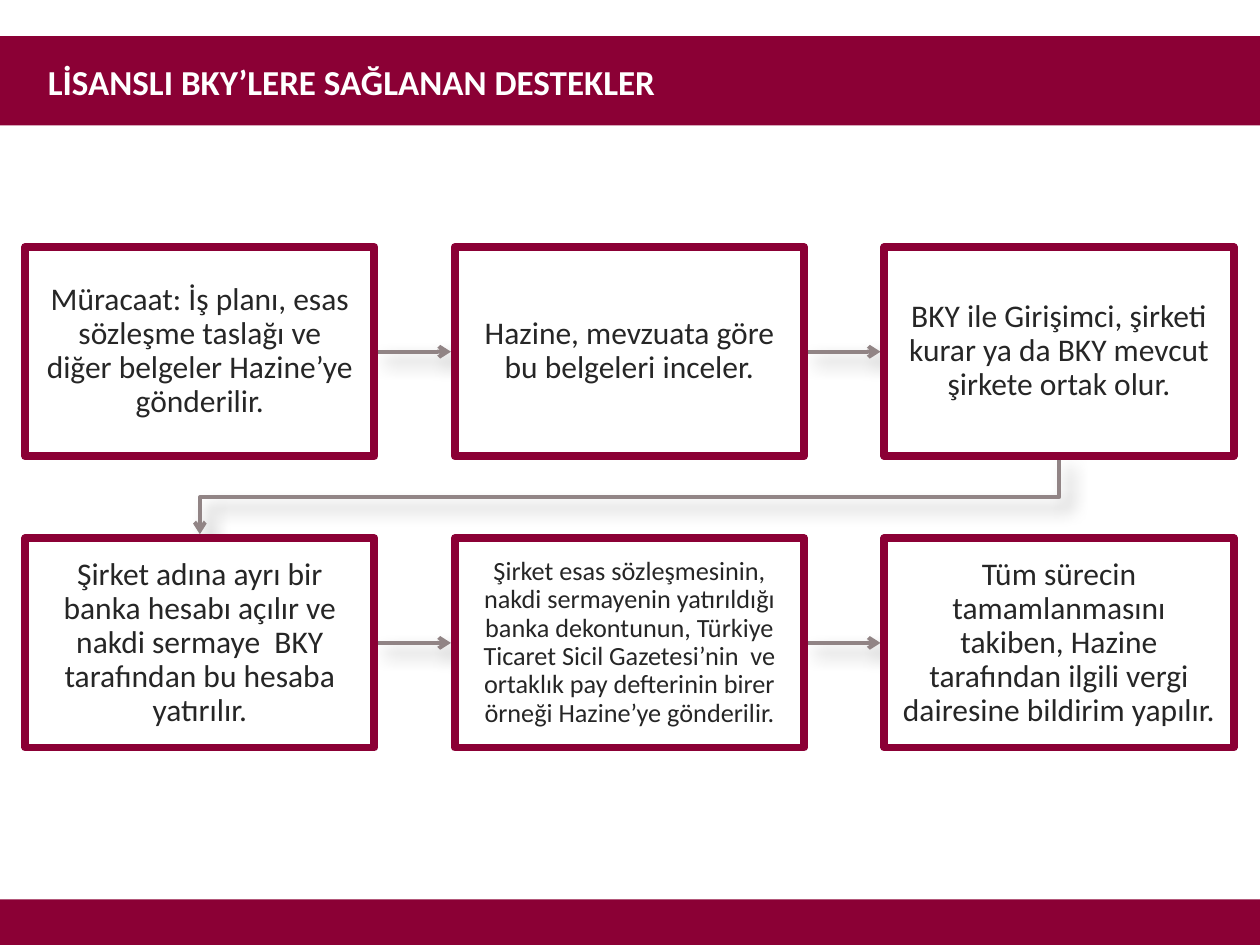
"""Build a slide showing the six support steps as a two-row flow."""
from dataclasses import dataclass

from lxml import etree
from pptx import Presentation
from pptx import util as u
from pptx.dml.color import RGBColor
from pptx.enum import shapes, text
from pptx.oxml import ns

WINE = RGBColor(0x8B, 0x00, 0x35)
WHITE = RGBColor(0xFF, 0xFF, 0xFF)
INK = RGBColor(0x26, 0x26, 0x26)
TAUPE = RGBColor(0x91, 0x84, 0x85)
BLACK = RGBColor(0, 0, 0)

FONT = "Calibri"
WIDE, HIGH = 25.4, 19.05
LEFT, TOP = 0.51, 4.98
CARD_W, CARD_H = 7.04, 4.22
STEP_X, STEP_Y = 8.66, 5.87
GAP = 0.08
COLS = 3


@dataclass
class Step:
    words: str
    size: int = 18
    inset: float = 0.36


STEPS = [
    Step("Müracaat: İş planı, esas sözleşme taslağı ve diğer belgeler Hazine’ye gönderilir."),
    Step("Hazine, mevzuata göre bu belgeleri inceler."),
    Step("BKY ile Girişimci, şirketi kurar ya da BKY mevcut şirkete ortak olur."),
    Step("Şirket adına ayrı bir banka hesabı açılır ve nakdi sermaye  BKY tarafından bu hesaba yatırılır."),
    Step("Şirket esas sözleşmesinin, nakdi sermayenin yatırıldığı banka dekontunun, "
         "Türkiye Ticaret Sicil Gazetesi’nin  ve ortaklık pay defterinin birer örneği "
         "Hazine’ye gönderilir.", 15, 0.3),
    Step("Tüm sürecin tamamlanmasını takiben, Hazine tarafından ilgili vergi dairesine bildirim yapılır."),
]


def add_run(para, words: str, size: int, color: RGBColor, bold: bool = False) -> None:
    """Append one styled run to a paragraph."""
    run = para.add_run()
    run.text = words
    font = run.font
    font.name, font.size, font.bold = FONT, u.Pt(size), bold
    font.color.rgb = color


def add_box(slide, x: float, y: float, w: float, h: float, fill: RGBColor):
    """Add a flat rectangle measured in centimetres."""
    box = slide.shapes.add_shape(
        shapes.MSO_SHAPE.RECTANGLE, u.Cm(x), u.Cm(y), u.Cm(w), u.Cm(h))
    box.shadow.inherit = False
    box.fill.solid()
    box.fill.fore_color.rgb = fill
    box.line.fill.background()
    return box


def add_title(slide, band) -> None:
    """Place the title on top of its band."""
    title = slide.shapes.title
    band._element.addnext(title._element)
    title.left, title.top = u.Cm(0.71), u.Cm(1.09)
    title.width, title.height = u.Cm(20.4), u.Cm(1.11)
    frame = title.text_frame
    frame.word_wrap = True
    frame.auto_size = text.MSO_AUTO_SIZE.SHAPE_TO_FIT_TEXT
    frame.vertical_anchor = text.MSO_ANCHOR.TOP
    para = frame.paragraphs[0]
    para.alignment = text.PP_ALIGN.LEFT
    add_run(para, "LİSANSLI BKY’LERE SAĞLANAN DESTEKLER", 20, WHITE, True)


def add_card(slide, step: Step, x: float, y: float) -> None:
    """Add one framed step with centred text."""
    card = add_box(slide, x, y, CARD_W, CARD_H, WHITE)
    card.line.color.rgb = WINE
    card.line.width = u.Pt(4.5)
    frame = card.text_frame
    frame.word_wrap = True
    frame.vertical_anchor = text.MSO_ANCHOR.MIDDLE
    frame.margin_left = frame.margin_right = u.Cm(step.inset)
    frame.margin_top = frame.margin_bottom = u.Cm(step.inset)
    para = frame.paragraphs[0]
    para.alignment = text.PP_ALIGN.CENTER
    para.line_spacing = 0.9
    add_run(para, step.words, step.size, INK)


def style_arrow(arrow) -> None:
    """Give a line its colour, arrowhead and soft shadow."""
    arrow.line.color.rgb = TAUPE
    arrow.line.width = u.Pt(2.25)
    props = arrow._element.spPr
    etree.SubElement(props.find(ns.qn("a:ln")), ns.qn("a:tailEnd"), type="arrow")
    for old in props.findall(ns.qn("a:effectLst")):
        props.remove(old)
    glow = etree.SubElement(
        etree.SubElement(props, ns.qn("a:effectLst")), ns.qn("a:outerShdw"),
        blurRad=str(u.Pt(10.2)), dist=str(u.Pt(8)), dir="2700000",
        algn="tl", rotWithShape="0")
    shade = etree.SubElement(glow, ns.qn("a:srgbClr"), val=str(BLACK))
    etree.SubElement(shade, ns.qn("a:alpha"), val="35000")


def add_link(slide, x: float, y: float) -> None:
    """Add an arrow from the card at x, y to its right neighbour."""
    mid = u.Cm(y + CARD_H / 2)
    style_arrow(slide.shapes.add_connector(
        shapes.MSO_CONNECTOR.STRAIGHT,
        u.Cm(x + CARD_W), mid, u.Cm(x + STEP_X - GAP), mid))


def add_turn(slide, x: float, y: float) -> None:
    """Add a bent arrow from the card at x, y to the start of the next row."""
    right, left = x + CARD_W / 2, LEFT + CARD_W / 2
    base, end = y + CARD_H, y + STEP_Y - GAP
    mid = (y + CARD_H + y + STEP_Y) / 2
    pen = slide.shapes.build_freeform(u.Cm(right), u.Cm(base))
    pen.add_line_segments(
        [(u.Cm(a), u.Cm(b)) for a, b in ((right, mid), (left, mid), (left, end))],
        close=False)
    turn = pen.convert_to_shape()
    turn.fill.background()
    style_arrow(turn)


def main() -> None:
    """Draw the slide and save it."""
    deck = Presentation()
    deck.slide_width, deck.slide_height = u.Cm(WIDE), u.Cm(HIGH)
    slide = deck.slides.add_slide(deck.slide_layouts[5])
    add_title(slide, add_box(slide, 0, 0.73, WIDE, 1.8, WINE))
    add_box(slide, 0, 18.13, WIDE, 0.92, WINE)
    for i, step in enumerate(STEPS):
        row, col = divmod(i, COLS)
        x, y = LEFT + col * STEP_X, TOP + row * STEP_Y
        if col < COLS - 1:
            add_link(slide, x, y)
        elif i < len(STEPS) - 1:
            add_turn(slide, x, y)
        add_card(slide, step, x, y)
    deck.save("out.pptx")


if __name__ == "__main__":
    main()
